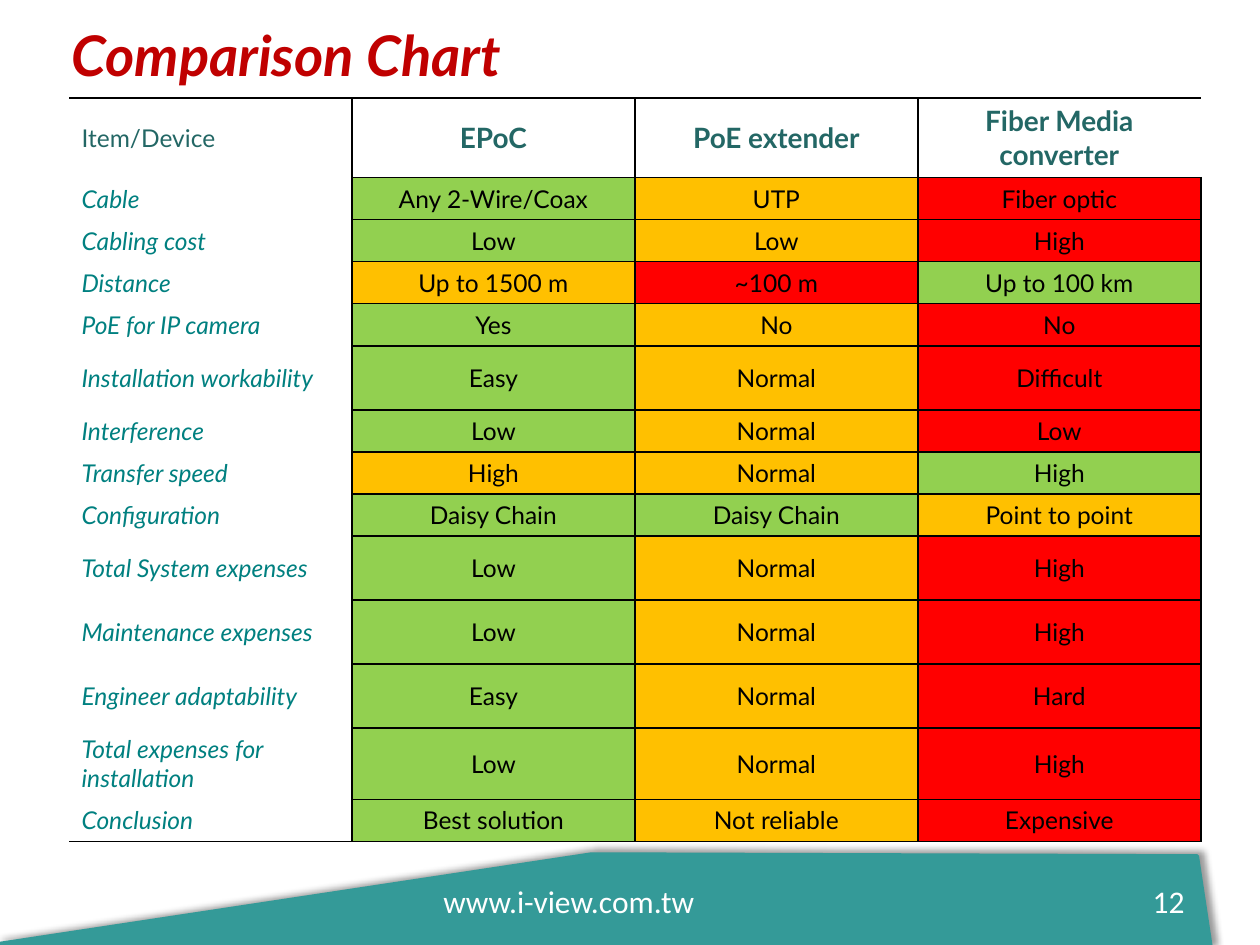
from lxml.etree import SubElement
from pptx import Presentation
from pptx.dml.color import RGBColor
from pptx.enum.shapes import MSO_SHAPE
from pptx.enum.text import MSO_ANCHOR, PP_ALIGN
from pptx.oxml import parse_xml
from pptx.oxml.ns import nsdecls, qn
from pptx.util import Pt

PX = 914400 / 126
BLACK = RGBColor(0, 0, 0)
WHITE = RGBColor(255, 255, 255)
TITLE_RED = RGBColor(0xC0, 0, 0)
HEADER_TEAL = RGBColor(0x23, 0x67, 0x65)
ITEM_TEAL = RGBColor(0, 0x80, 0x80)
BAND_TEAL = RGBColor(0x34, 0x9A, 0x98)
RATINGS = {"G": RGBColor(0x92, 0xD0, 0x50), "Y": RGBColor(0xFF, 0xC0, 0), "R": RGBColor(0xFF, 0, 0)}
NO_STYLE = "{2D5ABB26-0587-4C30-8999-92F81FD0307C}"

HEADERS = ["Item/Device", "EPoC", "PoE extender", "Fiber Media converter"]
# Row height, rating of each device, item and values
COMPARISON = [
    (42, "GYR", ["Cable", "Any 2-Wire/Coax", "UTP", "Fiber optic"]),
    (42, "GYR", ["Cabling cost", "Low", "Low", "High"]),
    (42, "YRG", ["Distance", "Up to 1500 m", "~100 m", "Up to 100 km"]),
    (42, "GYR", ["PoE for IP camera", "Yes", "No", "No"]),
    (64, "GYR", ["Installation workability", "Easy", "Normal", "Difficult"]),
    (42, "GYR", ["Interference", "Low", "Normal", "Low"]),
    (42, "YYG", ["Transfer speed", "High", "Normal", "High"]),
    (42, "GGY", ["Configuration", "Daisy Chain", "Daisy Chain", "Point to point"]),
    (64, "GYR", ["Total System expenses", "Low", "Normal", "High"]),
    (64, "GYR", ["Maintenance expenses", "Low", "Normal", "High"]),
    (64, "GYR", ["Engineer adaptability", "Easy", "Normal", "Hard"]),
    (64, "GYR", ["Total expenses for installation", "Low", "Normal", "High"]),
    (42, "GYR", ["Conclusion", "Best solution", "Not reliable", "Expensive"]),
]


def emu(*lengths):
    return [round(n * PX) for n in lengths]


def write(frame, text, color, align=PP_ALIGN.LEFT, **font_format):
    frame.text = text
    paragraph = frame.paragraphs[0]
    paragraph.alignment = align
    font = paragraph.runs[0].font
    font.color.rgb = color
    for name, value in font_format.items():
        setattr(font, name, value)


prs = Presentation()
prs.slide_width, prs.slide_height = emu(1260, 945)
slide = prs.slides.add_slide(prs.slide_layouts[5])
shapes = slide.shapes

# Title
title = shapes.title
title.left, title.top, title.width, title.height = emu(59, 0, 571, 108)
title.text_frame.vertical_anchor = MSO_ANCHOR.MIDDLE
write(title.text_frame, "Comparison Chart", TITLE_RED,
      name="Lato", size=Pt(32), bold=True, italic=True)

# Comparison table
rows = [(78, "", HEADERS)] + COMPARISON
last_row, last_column = len(rows) - 1, len(HEADERS) - 1
table_height = sum(height for height, _, _ in rows)
comparison = shapes.add_table(len(rows), len(HEADERS), *emu(69, 98, 1132, table_height)).table
comparison.first_row = comparison.horz_banding = False
comparison._tbl.tblPr.find(qn("a:tableStyleId")).text = NO_STYLE
for column in comparison.columns:
    column.width = emu(283)[0]

for r, (height, ratings, texts) in enumerate(rows):
    comparison.rows[r].height = emu(height)[0]
    for c, text in enumerate(texts):
        cell = comparison.cell(r, c)
        cell.vertical_anchor = MSO_ANCHOR.MIDDLE
        is_header, is_item = r == 0, c == 0

        # Borders: the item column has no lines between its rows
        borders = {
            "a:lnL": not is_item,
            "a:lnR": not (is_header and c == last_column),
            "a:lnT": is_header or not is_item,
            "a:lnB": is_header or not is_item or r == last_row,
        }
        for tag, drawn in borders.items():
            border = SubElement(cell._tc.get_or_add_tcPr(), qn(tag), w=str(Pt(1)))
            if drawn:
                line_fill = SubElement(border, qn("a:solidFill"))
                SubElement(line_fill, qn("a:srgbClr"), val=str(BLACK))
            else:
                SubElement(border, qn("a:noFill"))

        if is_header or is_item:
            cell.fill.background()
        else:
            cell.fill.solid()
            cell.fill.fore_color.rgb = RATINGS[ratings[c - 1]]

        write(cell.text_frame, text,
              HEADER_TEAL if is_header else ITEM_TEAL if is_item else BLACK,
              PP_ALIGN.LEFT if is_item else PP_ALIGN.CENTER,
              name="Lato", size=Pt(16 if is_header and not is_item else 14),
              bold=is_header and not is_item, italic=is_item and not is_header)

# Footer band
band = shapes.add_shape(MSO_SHAPE.DIAGONAL_STRIPE, *emu(513, 347, 185, 1197))
band.rotation = 81.4
band.adjustments[0] = 0.5
band.fill.solid()
band.fill.fore_color.rgb = BAND_TEAL
band.line.color.rgb = BAND_TEAL
band.line.width = Pt(2)
band._element.spPr.append(parse_xml(
    f'<a:effectLst {nsdecls("a")}><a:outerShdw blurRad="{Pt(4)}" dist="{Pt(3)}" '
    'dir="18900000" algn="bl" rotWithShape="0"><a:srgbClr val="000000">'
    '<a:alpha val="40000"/></a:srgbClr></a:outerShdw></a:effectLst>'))

# Page number and web address
for text, left, width, align in [
    ("12", 903, 294, PP_ALIGN.RIGHT),
    ("www.i-view.com.tw", 431, 399, PP_ALIGN.LEFT),
]:
    footer = shapes.add_textbox(*emu(left, 876, width, 50)).text_frame
    footer.word_wrap = True
    write(footer, text, WHITE, align, name="Calibri", size=Pt(18))

prs.save("out.pptx")
